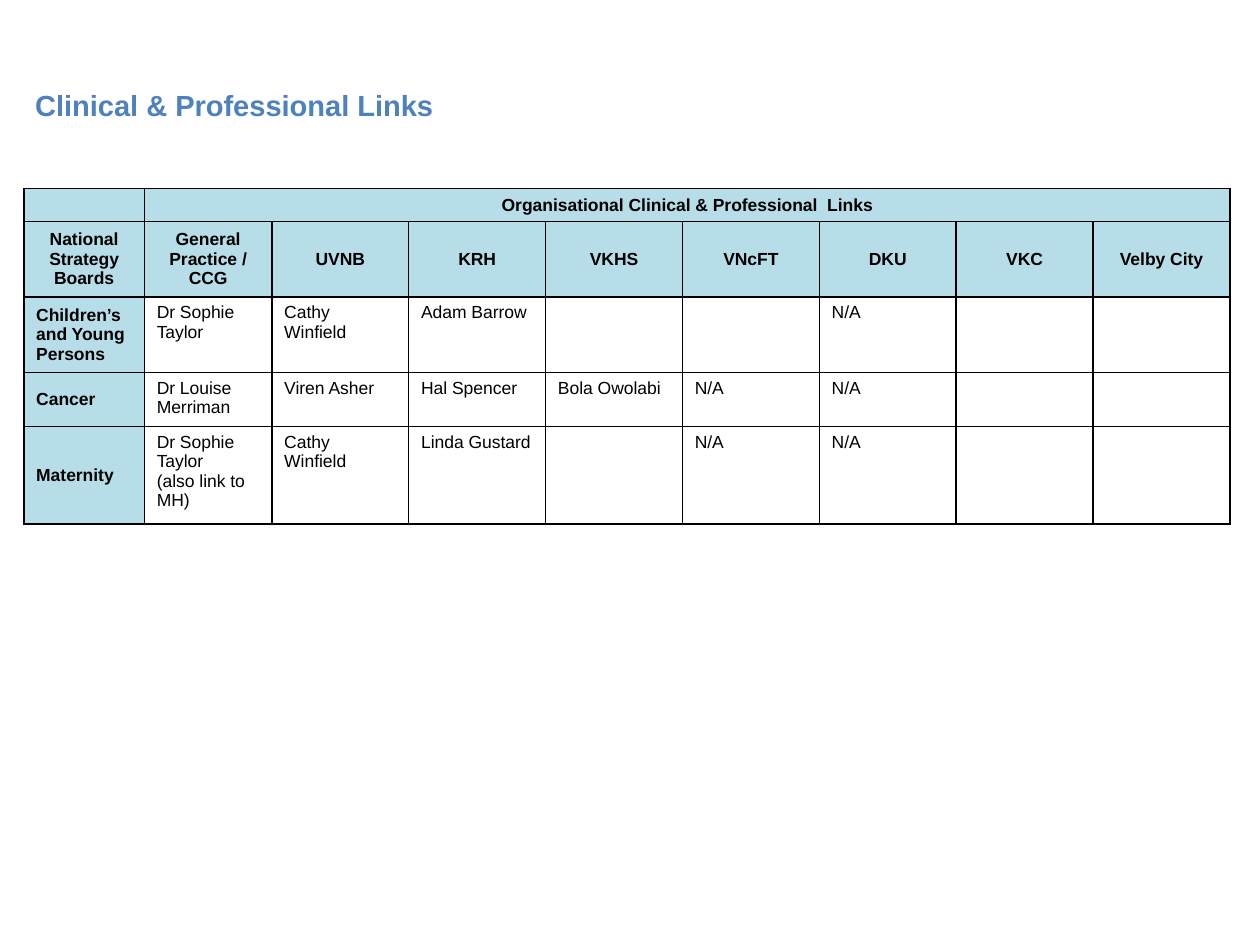
from dataclasses import dataclass

from lxml import etree
from pptx import Presentation
from pptx.dml.color import RGBColor
from pptx.enum.text import MSO_ANCHOR, PP_ALIGN
from pptx.oxml.ns import qn
from pptx.util import Cm, Pt

MIDDLE, TOP = MSO_ANCHOR.MIDDLE, MSO_ANCHOR.TOP
LEFT, CENTER = PP_ALIGN.LEFT, PP_ALIGN.CENTER

COLORS = {"heading": "4F81BD", "label": "B7DEE8", "body": "FFFFFF", "ink": "000000"}
FONT = "Arial"
TABLE_PT = 10
BORDER_PT = 1

COLUMN_CM = [2.43, 2.57] + [2.76] * 7
ROW_CM = [0.66, 1.52, 1.52, 1.09, 1.96]
CELL_MARGINS = {
    "margin_left": Cm(0.25), "margin_right": Cm(0.25),
    "margin_top": Cm(0.12), "margin_bottom": Cm(0.12),
}
HEADING_MARGINS = CELL_MARGINS | {"margin_left": Cm(0.23), "margin_right": Cm(0.23)}

# One row per line, "\n" starts a new paragraph
LINKS = [
    ["", "Organisational Clinical & Professional  Links"] + [""] * 7,
    ["National Strategy Boards", "General Practice / CCG", "UVNB", "KRH", "VKHS",
     "VNcFT", "DKU", "VKC", "Velby City"],
    ["Children’s and Young Persons", "Dr Sophie Taylor", "Cathy Winfield",
     "Adam Barrow", "", "", "N/A", "", ""],
    ["Cancer", "Dr Louise Merriman", "Viren Asher", "Hal Spencer", "Bola Owolabi",
     "N/A", "N/A", "", ""],
    ["Maternity", "Dr Sophie Taylor\n(also link to MH)", "Cathy Winfield",
     "Linda Gustard", "", "N/A", "N/A", "", ""],
]
HEADER_ROWS = 2


@dataclass(frozen=True)
class CellStyle:
    fill: str
    bold: bool
    align: PP_ALIGN
    anchor: MSO_ANCHOR


HEADER = CellStyle("label", True, CENTER, MIDDLE)
BOARD = CellStyle("label", True, LEFT, MIDDLE)
PERSON = CellStyle("body", False, LEFT, TOP)


def rgb(name: str) -> RGBColor:
    return RGBColor.from_string(COLORS[name])


def apply(target, values: dict) -> None:
    for attribute, value in values.items():
        setattr(target, attribute, value)


def write(frame, text: str, size: float, bold: bool, color: str, align: PP_ALIGN) -> None:
    frame.text = text
    for paragraph in frame.paragraphs:
        paragraph.alignment = align
        for run in paragraph.runs:
            apply(run.font, {"name": FONT, "size": Pt(size), "bold": bold})
            run.font.color.rgb = rgb(color)
        if not paragraph.runs:
            # Keeps an empty cell from growing to the default text size
            etree.SubElement(paragraph._p, qn("a:endParaRPr"), sz=str(size * 100))


def add_borders(cell) -> None:
    properties = cell._tc.get_or_add_tcPr()
    for index, side in enumerate(("a:lnL", "a:lnR", "a:lnT", "a:lnB")):
        line = etree.Element(qn(side), w=str(Pt(BORDER_PT)))
        fill = etree.SubElement(line, qn("a:solidFill"))
        etree.SubElement(fill, qn("a:srgbClr"), val=COLORS["ink"])
        properties.insert(index, line)


def format_cell(cell, text: str, style: CellStyle) -> None:
    apply(cell, CELL_MARGINS | {"vertical_anchor": style.anchor})
    cell.fill.solid()
    cell.fill.fore_color.rgb = rgb(style.fill)
    write(cell.text_frame, text, TABLE_PT, style.bold, "ink", style.align)
    add_borders(cell)


def style_at(row: int, column: int) -> CellStyle:
    if row < HEADER_ROWS:
        return HEADER
    return BOARD if column == 0 else PERSON


def add_links_table(slide) -> None:
    table = slide.shapes.add_table(
        len(ROW_CM), len(COLUMN_CM), Cm(0.48), Cm(3.8),
        Cm(sum(COLUMN_CM)), Cm(sum(ROW_CM))).table
    for column, width in zip(table.columns, COLUMN_CM):
        column.width = Cm(width)
    for row, height in zip(table.rows, ROW_CM):
        row.height = Cm(height)
    for r, texts in enumerate(LINKS):
        for c, text in enumerate(texts):
            format_cell(table.cell(r, c), text, style_at(r, c))
    table.cell(0, 1).merge(table.cell(0, len(COLUMN_CM) - 1))


def add_heading(slide) -> None:
    frame = slide.shapes.add_textbox(Cm(0.48), Cm(1.4), Cm(18.87), Cm(1.42)).text_frame
    apply(frame, HEADING_MARGINS | {"word_wrap": True, "vertical_anchor": MIDDLE})
    write(frame, "Clinical & Professional Links", 16.6, True, "heading", LEFT)


def main() -> None:
    presentation = Presentation()
    apply(presentation, {"slide_width": Cm(25.4), "slide_height": Cm(19.05)})
    slide = presentation.slides.add_slide(presentation.slide_layouts[6])
    add_links_table(slide)
    add_heading(slide)
    presentation.save("out.pptx")


if __name__ == "__main__":
    main()
